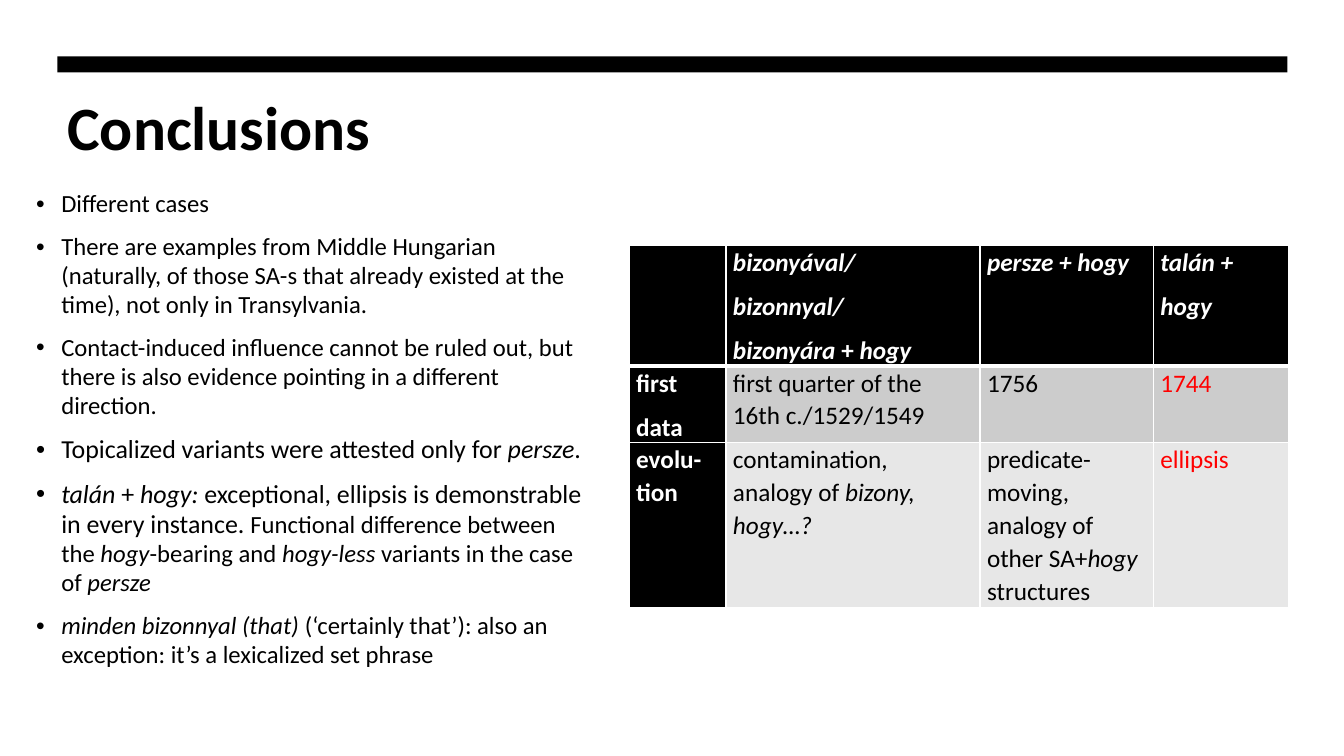
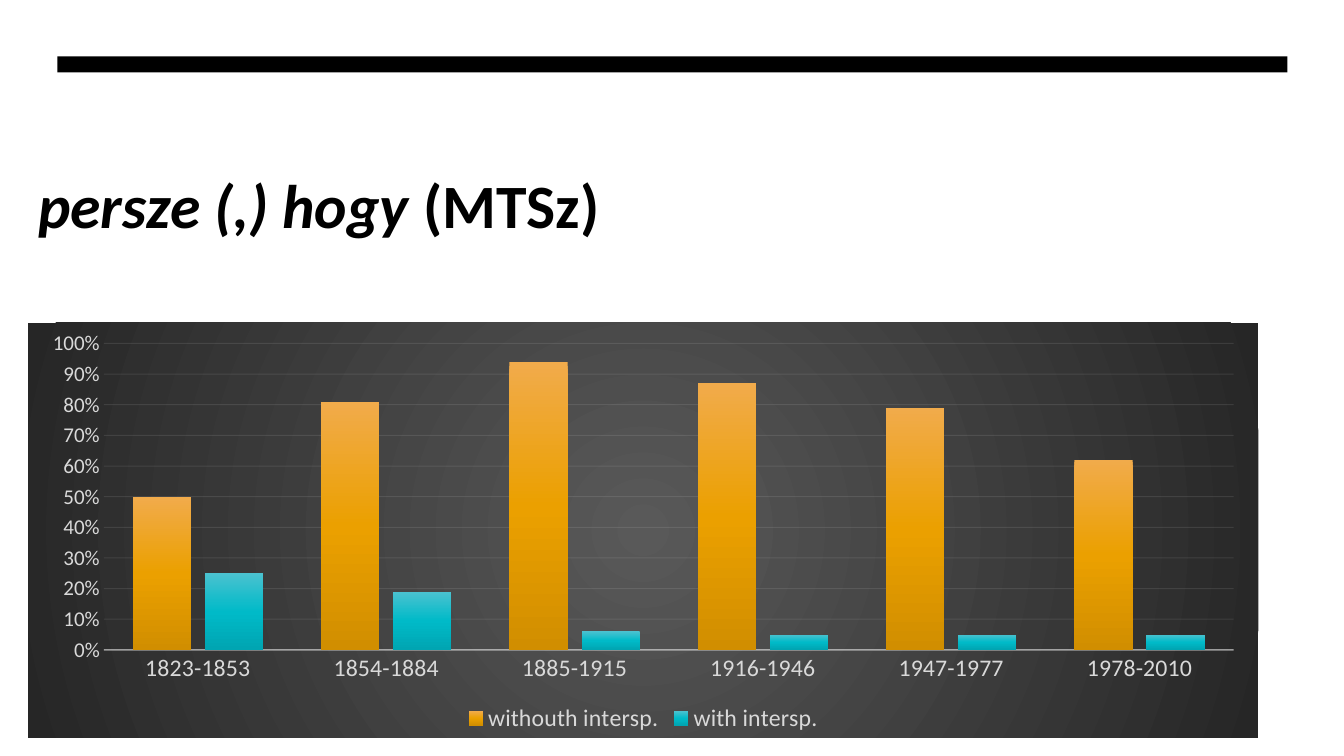
import pptx
import pptx.chart.data
import pptx.dml.color
import pptx.enum.chart
import pptx.enum.shapes
import pptx.enum.text
import pptx.oxml
import pptx.oxml.ns
import pptx.util

Inches, Pt = pptx.util.Inches, pptx.util.Pt

# Shared look
FONT, BLACK, WHITE, RED = "Calibri", "000000", "FFFFFF", "FF0000"
GREY, PALE, DARK, LIGHT = "D9D9D9", "F2F2F2", "CCCCCC", "E7E7E7"
BAR = (0.57, 0.56, 12.2, 0.16)

# Content: text between asterisks is italic
POINTS = [
    [("Different cases", 17.6)],
    [("There are examples from Middle Hungarian (naturally, of those SA-s that "
      "already existed at the time), not only in Transylvania.", 17.6)],
    [("Contact-induced influence cannot be ruled out, but there is also evidence "
      "pointing in a different direction.", 17.6)],
    [("Topicalized variants were attested only for *persze*.", 18.5)],
    [("*talán *+ *hogy:* exceptional, ellipsis is demonstrable in every instance. ", 18.5),
     ("Functional difference between the *hogy*-bearing and *hogy-less *variants "
      "in the case of *persze*", 17.6)],
    [("*minden bizonnyal (that) *(‘certainly that’): also an exception: "
      "it’s a lexicalized set phrase", 17.6)],
]

COLS, ROWS = (0.96, 2.52, 1.72, 1.34), (1.2, 0.76, 1.64)
CELLS = [
    [[], ["*bizonyával/*", "*bizonnyal/*", "*bizonyára *+ *hogy*"],
     ["*persze + hogy*"], ["*talán +*", "*hogy*"]],
    [["first", "data"], ["first quarter of the 16th c./1529/1549"], ["1756"], ["1744"]],
    [["evolu-tion"], ["contamination, analogy of *bizony, hogy…?*"],
     ["predicate-moving, analogy of other SA+*hogy *structures"], ["ellipsis"]],
]

YEARS = ["1823-1853", "1854-1884", "1885-1915", "1916-1946", "1947-1977", "1978-2010"]
SERIES = [
    ("withouth intersp.", (0.5, 0.81, 0.94, 0.87, 0.79, 0.62),
     [(0, "F1AB4B"), (50, "EBA000"), (100, "D18E00")]),
    ("with intersp.", (0.25, 0.19, 0.06, 0.05, 0.05, 0.05),
     [(0, "4BC2D0"), (50, "00BAC8"), (100, "00A5B2")]),
]
LINEAR = '<a:lin ang="5400000" scaled="0"/>'
RADIAL = ('<a:path path="circle"><a:fillToRect l="50000" t="50000" '
          'r="50000" b="50000"/></a:path>')


def rgb(code):
    return pptx.dml.color.RGBColor.from_string(code)


def xml(text):
    names = pptx.oxml.ns.nsdecls("a", "c")
    return pptx.oxml.parse_xml(f"<a:wrap {names}>{text}</a:wrap>")[0]


def apply(item, values):
    for name, value in values.items():
        setattr(item, name, value)


def style(font, size, color, **extra):
    apply(font, {"name": FONT, "size": Pt(size), **extra})
    font.color.rgb = rgb(color)


def write(par, text, size, color, bold=False):
    for i, part in enumerate(text.split("*")):
        if part:
            run = par.add_run()
            run.text = part
            style(run.font, size, color, bold=bold, italic=i % 2 == 1)


def add_box(slide, place):
    frame = slide.shapes.add_textbox(*map(Inches, place)).text_frame
    apply(frame, {"word_wrap": True,
                  "vertical_anchor": pptx.enum.text.MSO_ANCHOR.TOP})
    return frame


def paragraphs(frame, count):
    return [frame.paragraphs[0]] + [frame.add_paragraph() for _ in range(count - 1)]


def add_page(deck, title, place, top=0.05):
    slide = deck.slides.add_slide(deck.slide_layouts[6])
    bar = slide.shapes.add_shape(pptx.enum.shapes.MSO_SHAPE.RECTANGLE, *map(Inches, BAR))
    bar.shadow.inherit = False
    bar.fill.solid()
    bar.fill.fore_color.rgb = rgb(BLACK)
    bar.line.fill.background()
    frame = add_box(slide, place)
    frame.margin_top = Inches(top)
    write(frame.paragraphs[0], title, 44, BLACK, True)
    return slide


def add_points(slide):
    frame = add_box(slide, (0.26, 1.83, 5.72, 5.44))
    for par, runs in zip(paragraphs(frame, len(POINTS)), POINTS):
        apply(par, {"space_before": Pt(10), "line_spacing": 0.98})
        props = par._p.get_or_add_pPr()
        props.set("marL", str(Inches(0.25)))
        props.set("indent", str(Inches(-0.25)))
        props.append(xml('<a:buFont typeface="Arial"/>'))
        props.append(xml('<a:buChar char="•"/>'))
        for text, size in runs:
            write(par, text, size, BLACK)


def add_borders(cell, head):
    props = cell._tc.get_or_add_tcPr()
    for i, side in enumerate("LRTB"):
        wide = Pt(3 if head and side == "B" else 1)
        props.insert(i, xml(f'<a:ln{side} w="{wide}"><a:solidFill><a:srgbClr val="{WHITE}"/>'
                            f'</a:solidFill></a:ln{side}>'))


def add_grid(slide):
    place = (6.24, 2.43, sum(COLS), sum(ROWS))
    table = slide.shapes.add_table(len(ROWS), len(COLS), *map(Inches, place)).table
    for col, width in zip(table.columns, COLS):
        col.width = Inches(width)
    for r, height in enumerate(ROWS):
        table.rows[r].height = Inches(height)
        for c, lines in enumerate(CELLS[r]):
            cell = table.cell(r, c)
            head = r == 0 or c == 0
            ink = WHITE if head else RED if c == 3 else BLACK
            apply(cell, {"margin_left": Inches(0.07), "margin_right": Inches(0.07),
                         "margin_top": 0, "margin_bottom": 0})
            cell.fill.solid()
            cell.fill.fore_color.rgb = rgb(BLACK if head else (DARK, LIGHT)[r - 1])
            add_borders(cell, r == 0)
            for par, text in zip(paragraphs(cell.text_frame, len(lines)), lines):
                apply(par, {"line_spacing": 1.07, "space_after": Pt(8)})
                write(par, text, 18, ink, head)


def blend(stops, shade):
    marks = "".join(f'<a:gs pos="{pos * 1000}"><a:srgbClr val="{code}"/></a:gs>'
                    for pos, code in stops)
    return f'<a:gradFill rotWithShape="1"><a:gsLst>{marks}</a:gsLst>{shade}</a:gradFill>'


def fade(line, width, alpha):
    line.width = Pt(width)
    line.color.rgb = rgb(PALE)
    tint = line._get_or_add_ln().find(".//" + pptx.oxml.ns.qn("a:srgbClr"))
    tint.append(xml(f'<a:alpha val="{alpha * 1000}"/>'))


def add_bars(slide):
    data = pptx.chart.data.CategoryChartData(number_format="0%")
    data.categories = YEARS
    for name, values, _ in SERIES:
        data.add_series(name, values)
    enums = pptx.enum.chart
    chart = slide.shapes.add_chart(enums.XL_CHART_TYPE.COLUMN_CLUSTERED,
                                   *map(Inches, (0.28, 3.2, 12.2, 4.12)), data).chart
    apply(chart, {"has_title": False, "has_legend": True})
    style(chart.font, 10, BLACK)
    apply(chart.legend, {"position": enums.XL_LEGEND_POSITION.BOTTOM,
                         "include_in_layout": False})
    style(chart.legend.font, 17, GREY)

    # Axes
    years, share = chart.category_axis, chart.value_axis
    for axis, size in ((years, 17), (share, 15)):
        apply(axis, {"major_tick_mark": enums.XL_TICK_MARK.NONE,
                     "minor_tick_mark": enums.XL_TICK_MARK.NONE})
        style(axis.tick_labels.font, size, GREY)
    apply(share, {"minimum_scale": 0, "maximum_scale": 1, "major_unit": 0.1,
                  "has_major_gridlines": True})
    apply(share.tick_labels, {"number_format": "0%", "number_format_is_linked": False})
    share.format.line.fill.background()
    fade(years.format.line, 1, 54)
    fade(share.major_gridlines.format.line, 0.75, 10)

    # Gradient fills
    plot = chart.plots[0]
    apply(plot, {"gap_width": 100, "overlap": -24, "vary_by_categories": False})
    for series, (_, _, stops) in zip(plot.series, SERIES):
        series.format.fill.solid()
        solid = series._element.find(".//" + pptx.oxml.ns.qn("a:solidFill"))
        solid.getparent().replace(solid, xml(blend(stops, LINEAR)))
    back = blend([(0, "595959"), (100, "262626")], RADIAL)
    area = chart._chartSpace.find(pptx.oxml.ns.qn("c:chart"))
    area.addnext(xml(f"<c:spPr>{back}<a:ln><a:noFill/></a:ln></c:spPr>"))


def main():
    deck = pptx.Presentation()
    apply(deck, {"slide_width": Inches(13.33), "slide_height": Inches(7.5)})
    # Conclusions
    slide = add_page(deck, "Conclusions", (0.57, 0.83, 12.2, 1.6))
    add_points(slide)
    add_grid(slide)
    # Chart
    slide = add_page(deck, "*persze (,) hogy *(MTSz)", (0.28, 0.86, 12.87, 1.81), 0.8)
    add_bars(slide)
    deck.save("out.pptx")


if __name__ == "__main__":
    main()
